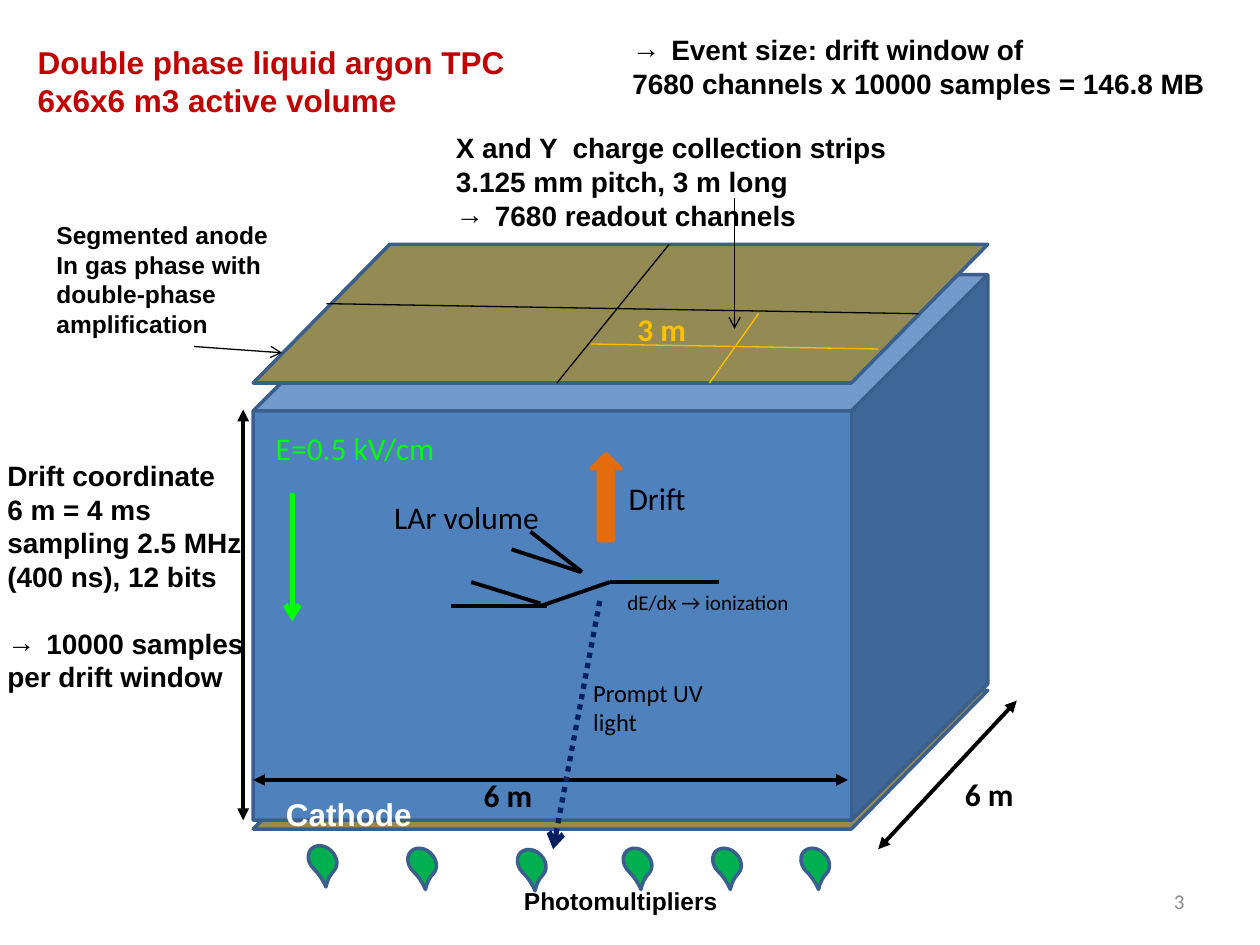
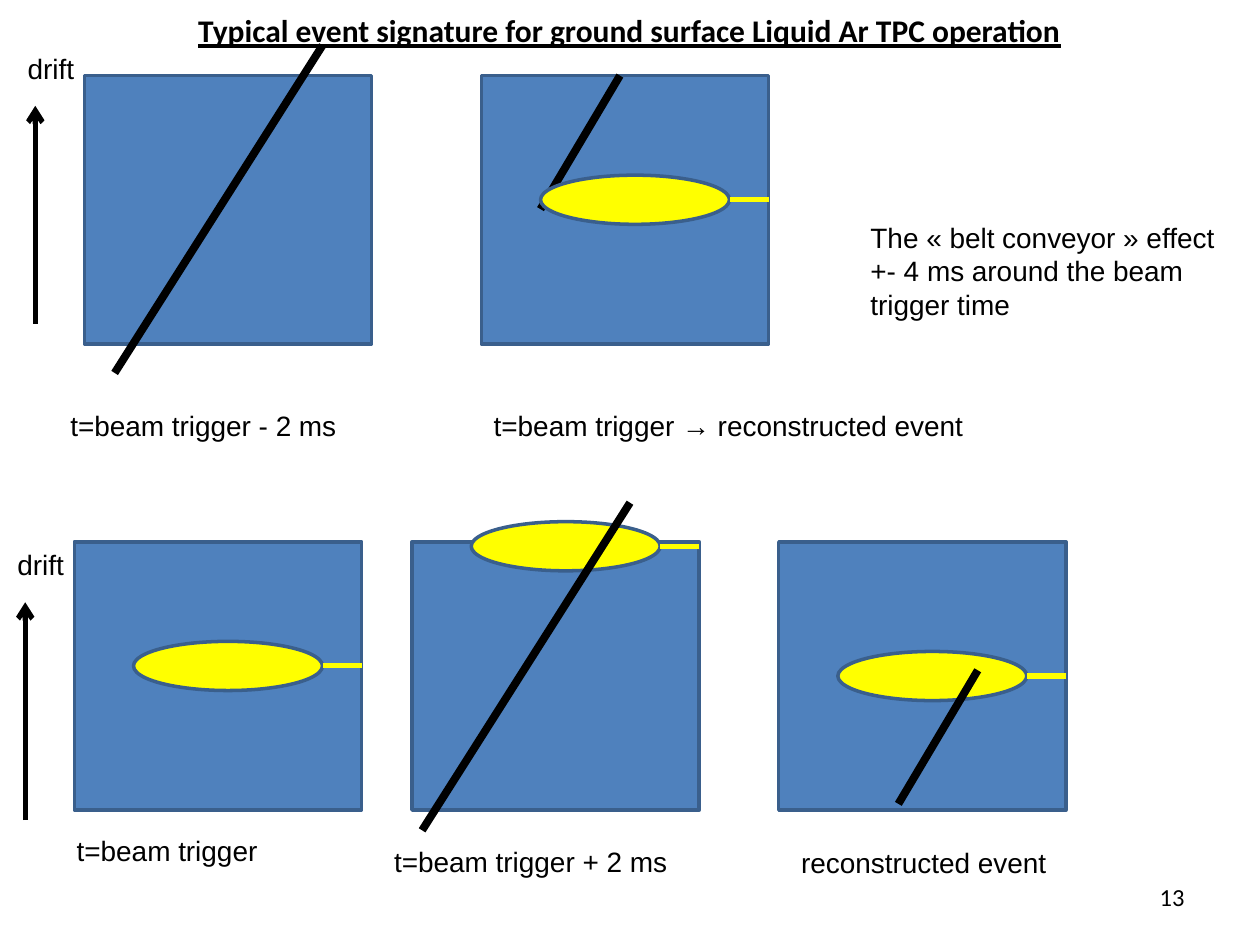
from dataclasses import dataclass
from typing import Any

from lxml.etree import SubElement
from pptx import Presentation
from pptx.dml.color import RGBColor
from pptx.enum.dml import MSO_LINE
from pptx.enum.shapes import MSO_CONNECTOR, MSO_SHAPE
from pptx.enum.text import MSO_ANCHOR, PP_ALIGN
from pptx.oxml.ns import qn
from pptx.util import Inches, Pt

BLACK = RGBColor(0x00, 0x00, 0x00)
WHITE = RGBColor(0xFF, 0xFF, 0xFF)
GREY = RGBColor(0x8C, 0x8C, 0x8C)
RED = RGBColor(0xC0, 0x00, 0x00)
BLUE = RGBColor(0x4F, 0x81, 0xBD)
EDGE = RGBColor(0x3A, 0x5F, 0x8C)
NAVY = RGBColor(0x00, 0x20, 0x60)
OLIVE = RGBColor(0x94, 0x8A, 0x54)
LIME = RGBColor(0x00, 0xFF, 0x00)
GREEN = RGBColor(0x00, 0xB0, 0x50)
ORANGE = RGBColor(0xE4, 0x6C, 0x0A)
GOLD = RGBColor(0xFF, 0xC0, 0x00)
YELLOW = RGBColor(0xFF, 0xFF, 0x00)
ARIAL, CALIBRI = "Arial", "Calibri"

CHAMBER_W, CHAMBER_H = 2.28, 2.13
SHOWER_X, SHOWER_W, SHOWER_H = 0.47, 1.5, 0.39
FULL_TRACK, SHORT_TRACK = (1.65, 2.6), (0.63, 1.06)


def add_arrow_bullet(p):
    pPr = p._p.get_or_add_pPr()
    pPr.set("marL", str(Inches(0.31)))
    pPr.set("indent", str(-Inches(0.31)))
    SubElement(pPr, qn("a:buFont"), typeface=ARIAL)
    SubElement(pPr, qn("a:buChar"), char="→")


@dataclass
class Region:
    """A part of a slide; everything in it is placed from its top left corner."""
    slide: Any
    x: float = 0
    y: float = 0

    def at(self, x, y):
        return Inches(self.x + x), Inches(self.y + y)

    def shape(self, kind, x, y, w, h, fill, edge=EDGE):
        sp = self.slide.shapes.add_shape(kind, *self.at(x, y), Inches(w), Inches(h))
        sp.shadow.inherit = False
        sp.fill.solid()
        sp.fill.fore_color.rgb = fill
        sp.line.color.rgb = edge
        sp.line.width = Pt(2)
        return sp

    def line(self, start, end, color=BLACK, width=2.25, head=None, tail=None, dash=None):
        cx = self.slide.shapes.add_connector(
            MSO_CONNECTOR.STRAIGHT, *self.at(*start), *self.at(*end))
        cx.line.color.rgb = color
        cx.line.width = Pt(width)
        if dash:
            cx.line.dash_style = dash
        ln = cx.line._get_or_add_ln()
        for tag, kind in (("a:headEnd", head), ("a:tailEnd", tail)):
            if kind:
                SubElement(ln, qn(tag), type=kind)
        SubElement(cx._element.spPr, qn("a:effectLst"))
        return cx

    def text(self, x, y, w, h, lines, size=16, font=ARIAL, color=BLACK, bold=False,
             underline=False, align=PP_ALIGN.LEFT, wrap=False):
        """Lines that start with an arrow become arrow bullets."""
        box = self.slide.shapes.add_textbox(*self.at(x, y), Inches(w), Inches(h))
        tf = box.text_frame
        tf.word_wrap = wrap
        for i, line in enumerate(lines):
            p = tf.add_paragraph() if i else tf.paragraphs[0]
            p.alignment = align
            if line.startswith("→ "):
                add_arrow_bullet(p)
            r = p.add_run()
            r.text = line.removeprefix("→ ")
            r.font.name, r.font.size = font, Pt(size)
            r.font.bold, r.font.underline = bold, underline
            r.font.color.rgb = color
        return tf


def page_number(s, number, size, color, anchor):
    tf = Region(s, 7.17, 6.95).text(0, 0, 2.33, 0.4, [number], size, CALIBRI, color,
                                    align=PP_ALIGN.RIGHT, wrap=True)
    tf.vertical_anchor = anchor


def electrode_plate(tank, y):
    plate = tank.shape(MSO_SHAPE.PARALLELOGRAM, 0, y, 5.83, 1.1, OLIVE)
    plate.adjustments[0] = 0.984


def argon_tank(tank):
    electrode_plate(tank, 3.54)
    tank.shape(MSO_SHAPE.CUBE, 0, 0.24, 5.83, 4.33, BLUE)
    tank.line((0.31, 1.97), (0.31, 2.99), LIME, 3, tail="arrow")
    tank.text(0.08, 1.42, 1.47, 0.4, ["E=0.5 kV/cm"], 18, CALIBRI, LIME)
    tank.text(0.16, 4.32, 1.21, 0.4, ["Cathode"], 18, color=WHITE, bold=True)
    tank.text(1.02, 1.96, 1.36, 0.4, ["LAr volume"], 18, CALIBRI)


def segmented_anode(tank):
    electrode_plate(tank, 0)
    for start, end, color in (
        ((3.3, 0), (2.41, 1.1), BLACK),
        ((0.58, 0.47), (5.28, 0.55), BLACK),
        ((2.68, 0.79), (4.96, 0.83), GOLD),
        ((3.62, 1.1), (4.01, 0.55), GOLD),
    ):
        tank.line(start, end, color, 0.75)
    tank.text(2.95, 0.47, 0.7, 0.4, ["3 m"], 18, CALIBRI, GOLD, bold=True)


def tank_dimensions(tank):
    for start, end in (
        ((-0.08, 1.31), (-0.08, 4.57)),
        ((4.72, 4.25), (0, 4.25)),
        ((6.06, 3.62), (4.96, 4.8)),
    ):
        tank.line(start, end, head="triangle", tail="triangle")
    for x, y in ((1.73, 4.17), (5.55, 4.16)):
        tank.text(x, y, 0.7, 0.4, ["6 m"], 18, CALIBRI, bold=True)


def ionization_event(event):
    for start, end in (
        ((2.13, 0.4), (1.26, 0.4)),
        ((1.26, 0.4), (0.71, 0.59)),
        ((0.71, 0.57), (0.16, 0.4)),
        ((0.76, 0.59), (0, 0.59)),
        ((1.03, 0.32), (0.48, 0.14)),
        ((1.04, 0.32), (0.63, 0)),
    ):
        event.line(start, end)
    event.shape(MSO_SHAPE.UP_ARROW, 1.11, -0.62, 0.24, 0.69, ORANGE, ORANGE)
    event.text(1.31, -0.47, 0.66, 0.4, ["Drift"], 18, CALIBRI)
    event.line((1.18, 0.55), (0.81, 2.52), NAVY, 3, tail="arrow",
               dash=MSO_LINE.ROUND_DOT)
    event.text(1.03, 1.11, 1.12, 0.57, ["Prompt UV", "light"], 14, CALIBRI)
    event.text(1.3, 0.41, 2.32, 0.3, ["dE/dx → ionization"], 12, CALIBRI, wrap=True)


def photomultipliers(row):
    for x, y in ((0, 0), (0.79, 0.02), (1.66, 0.03), (2.5, 0.02), (3.21, 0.02), (3.91, 0.02)):
        tube = row.shape(MSO_SHAPE.TEAR, x, y, 0.2, 0.25, GREEN)
        tube.adjustments[0] = 1.349
        tube.rotation = 134.3
    row.text(1.6, 0.28, 1.75, 0.34, ["Photomultipliers"], 14, bold=True)


def readout_notes(page):
    page.text(0.2, 0.29, 3.95, 0.71,
              ["Double phase liquid argon TPC", "6x6x6 m3 active volume"],
              18, color=RED, bold=True)
    page.text(4.92, 0.21, 4.76, 0.64,
              ["→ Event size: drift window of",
               "7680 channels x 10000 samples = 146.8 MB"], bold=True, wrap=True)
    page.text(3.52, 0.99, 3.66, 1.14,
              ["X and Y  charge collection strips", "3.125 mm pitch, 3 m long",
               "→ 7680 readout channels"], bold=True)
    page.text(0.35, 1.7, 2.36, 1.04,
              ["Segmented anode", "In gas phase with double-phase amplification"],
              14, bold=True, wrap=True)
    drift = page.text(-0.04, 3.59, 2.23, 1.99,
                      ["Drift coordinate", "6 m = 4 ms", "sampling 2.5 MHz",
                       "(400 ns), 12 bits", "→ 10000 samples", "per drift window"],
                      bold=True, wrap=True)
    drift.paragraphs[4].space_before = Pt(19)
    page.line((5.83, 1.57), (5.83, 2.61), width=0.75, tail="arrow")
    page.line((1.54, 2.75), (2.24, 2.8), width=0.75, tail="arrow")


def detector_slide(s):
    tank = Region(s, 2.01, 1.94)
    argon_tank(tank)
    segmented_anode(tank)
    tank_dimensions(tank)
    ionization_event(Region(s, 3.58, 4.22))
    photomultipliers(Region(s, 2.46, 6.7))
    readout_notes(Region(s))
    page_number(s, "3", 12, GREY, MSO_ANCHOR.MIDDLE)


def beam_shower(panel, chamber, y):
    panel.shape(MSO_SHAPE.OVAL, SHOWER_X, y, SHOWER_W, SHOWER_H, YELLOW)
    mid = y + SHOWER_H / 2
    beam = panel.line((CHAMBER_W, mid), (SHOWER_X + SHOWER_W, mid), YELLOW, 3)
    if abs(mid - CHAMBER_H / 2) < 0.01:
        beam.begin_connect(chamber, 3)


def muon_track(panel, x, y, size):
    panel.line((x, y), (x - size[0], y + size[1]), width=4.5)


def event_panel(panel, caption, caption_box, shower_y=None, track=None, track_behind=False):
    chamber = panel.shape(MSO_SHAPE.RECTANGLE, 0, 0, CHAMBER_W, CHAMBER_H, BLUE)
    if track and track_behind:
        muon_track(panel, *track)
    if shower_y is not None:
        beam_shower(panel, chamber, shower_y)
    if track and not track_behind:
        muon_track(panel, *track)
    x, y, w = caption_box
    panel.text(x, y, w, 0.37, [caption])


def drift_axis(axis):
    axis.text(0, 0, 0.58, 0.37, ["drift"])
    axis.line((0.16, 2.21), (0.16, 0.48), width=3, tail="arrow")


def signature_slide(s):
    event_panel(Region(s, 0.67, 0.6), "t=beam trigger - 2 ms", (-0.21, 2.59, 2.35),
                track=(1.89, -0.24, FULL_TRACK))
    event_panel(Region(s, 3.82, 0.6), "t=beam trigger → reconstructed event",
                (0, 2.59, 4.04), 0.79, (1.1, 0, SHORT_TRACK), track_behind=True)
    event_panel(Region(s, 0.59, 4.3), "t=beam trigger", (-0.08, 2.27, 1.72), 0.79)
    event_panel(Region(s, 3.27, 4.3), "t=beam trigger + 2 ms", (-0.24, 2.35, 2.47),
                -0.16, (1.73, -0.31, FULL_TRACK))
    event_panel(Region(s, 6.18, 4.3), "reconstructed event", (0.08, 2.36, 2.24),
                0.87, (1.58, 1.02, SHORT_TRACK))
    drift_axis(Region(s, 0.12, 0.36))
    drift_axis(Region(s, 0.04, 4.3))
    page = Region(s)
    page.text(6.81, 1.7, 3.15, 0.91,
              ["The «\u00a0belt conveyor\u00a0» effect".replace("\u00a0", " "),
               "+- 4 ms around the beam trigger time"], wrap=True)
    page.text(1.24, 0.04, 7.51, 0.4,
              ["Typical event signature for ground surface Liquid Ar TPC operation"],
              18, CALIBRI, bold=True, underline=True, align=PP_ALIGN.CENTER)
    page_number(s, "13", 14, BLACK, MSO_ANCHOR.TOP)


def main():
    prs = Presentation()
    prs.slide_width, prs.slide_height = Inches(10), Inches(7.5)
    blank = prs.slide_layouts[6]
    for build in (detector_slide, signature_slide):
        build(prs.slides.add_slide(blank))
    prs.save("out.pptx")


if __name__ == "__main__":
    main()
